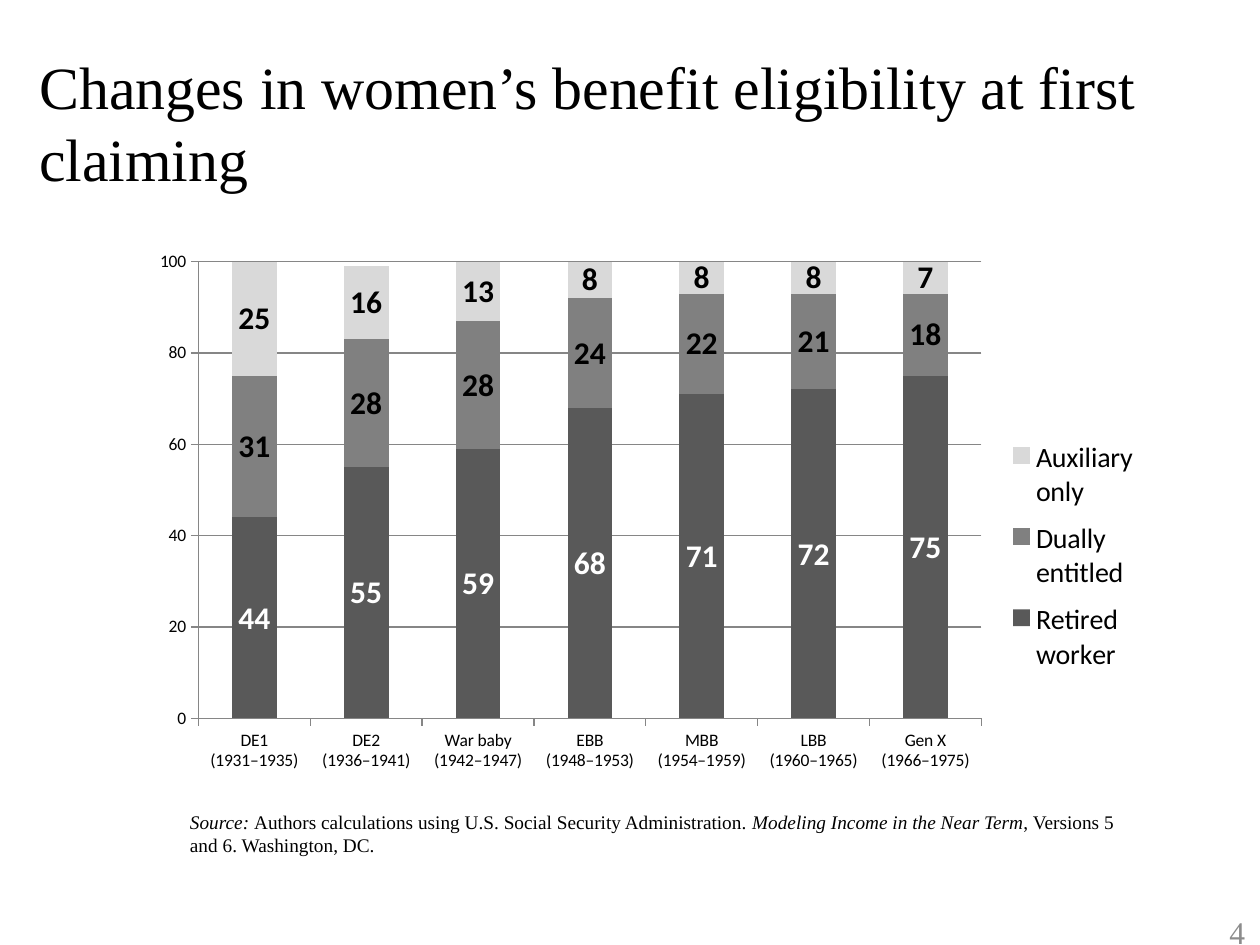
from lxml import etree
from pptx import Presentation
from pptx.chart.data import CategoryChartData
from pptx.dml.color import RGBColor
from pptx.enum.chart import XL_CHART_TYPE, XL_LABEL_POSITION, XL_LEGEND_POSITION, XL_TICK_MARK
from pptx.enum.text import MSO_ANCHOR, MSO_AUTO_SIZE, PP_ALIGN
from pptx.oxml.ns import qn
from pptx.util import Cm, Pt

COLORS = {
    "text": "000000",
    "muted": "8C8C8C",
    "light": "FFFFFF",
    "line": "868686",
    "retired": "595959",
    "dual": "808080",
    "auxiliary": "D9D9D9",
}
COHORTS = [
    "DE1\n(1931–1935)", "DE2\n(1936–1941)", "War baby\n(1942–1947)",
    "EBB\n(1948–1953)", "MBB\n(1954–1959)", "LBB\n(1960–1965)", "Gen X\n(1966–1975)",
]
# name, percentages, fill, label colour
ELIGIBILITY = [
    ("Retired worker", (44, 55, 59, 68, 71, 72, 75), "retired", "light"),
    ("Dually entitled", (31, 28, 28, 24, 22, 21, 18), "dual", "text"),
    ("Auxiliary only", (25, 16, 13, 8, 8, 8, 7), "auxiliary", "text"),
]


class SlideBuilder:
    serif = "Times New Roman"
    sans = "Calibri"

    def __init__(self, page):
        self.page = page

    def color(self, name):
        return RGBColor.from_string(COLORS[name])

    def style(self, font, size, color="text", face=None):
        font.name = face or self.serif
        font.size = Pt(size)
        font.color.rgb = self.color(color)

    def place(self, shape, left, top, width, height):
        shape.left, shape.top = Cm(left), Cm(top)
        shape.width, shape.height = Cm(width), Cm(height)

    def title(self, text, bounds):
        box = self.page.shapes.title
        self.place(box, *bounds)
        frame = box.text_frame
        frame.text = text
        frame.word_wrap = True
        frame.auto_size = MSO_AUTO_SIZE.NONE
        frame.vertical_anchor = MSO_ANCHOR.MIDDLE
        frame.margin_left = Cm(0.41)
        para = frame.paragraphs[0]
        para.alignment = PP_ALIGN.LEFT
        self.style(para.font, 34.2)

    def text(self, lines, bounds, size, color="text", align=PP_ALIGN.LEFT, anchor=MSO_ANCHOR.TOP):
        """Write lines of (text, italic) spans into one paragraph."""
        box = self.page.shapes.add_textbox(*map(Cm, bounds))
        frame = box.text_frame
        frame.word_wrap = True
        frame.vertical_anchor = anchor
        para = frame.paragraphs[0]
        para.alignment = align
        self.style(para.font, size, color)
        for number, line in enumerate(lines):
            if number:
                para.add_line_break()
            for text, italic in line:
                span = para.add_run()
                span.text = text
                span.font.italic = italic

    def layout(self, parent, position, x, y, w, h, inner=False):
        """Fix a chart part at fractions of the chart's size."""
        for old in parent.findall(qn("c:layout")):
            parent.remove(old)
        layout = etree.Element(qn("c:layout"))
        manual = etree.SubElement(layout, qn("c:manualLayout"))
        settings = [("layoutTarget", "inner")] if inner else []
        settings += [("xMode", "edge"), ("yMode", "edge"), ("x", x), ("y", y), ("w", w), ("h", h)]
        for tag, value in settings:
            etree.SubElement(manual, qn(f"c:{tag}")).set("val", str(value))
        parent.insert(position, layout)

    def axis(self, axis):
        axis.major_tick_mark = XL_TICK_MARK.OUTSIDE
        axis.minor_tick_mark = XL_TICK_MARK.NONE
        axis.format.line.color.rgb = self.color("line")
        axis.format.line.width = Pt(0.75)

    def stacked_chart(self, cohorts, rows, bounds):
        data = CategoryChartData(number_format="#,##0")
        data.categories = cohorts
        for name, values, *_ in rows:
            data.add_series(name, values)
        chart = self.page.shapes.add_chart(
            XL_CHART_TYPE.COLUMN_STACKED, *map(Cm, bounds), data).chart
        chart.has_title = False
        self.style(chart.font, 10, face=self.sans)

        # Axes and gridlines
        self.axis(chart.category_axis)
        scale = chart.value_axis
        self.axis(scale)
        scale.minimum_scale, scale.maximum_scale, scale.major_unit = 0, 100, 20
        scale.has_major_gridlines = True
        scale.major_gridlines.format.line.color.rgb = self.color("line")
        scale.major_gridlines.format.line.width = Pt(0.75)

        # Columns and their labels
        plot = chart.plots[0]
        plot.gap_width, plot.overlap = 150, 100
        plot.vary_by_categories = False
        for series, (_, _, fill, label) in zip(plot.series, rows):
            series.format.fill.solid()
            series.format.fill.fore_color.rgb = self.color(fill)
            labels = series.data_labels
            labels.show_value = True
            labels.number_format = "#,##0"
            labels.number_format_is_linked = False
            labels.position = XL_LABEL_POSITION.CENTER
            self.style(labels.font, 18, label, self.sans)
            labels.font.bold = True

        # Legend and plot area
        chart.has_legend = True
        legend = chart.legend
        legend.position = XL_LEGEND_POSITION.RIGHT
        legend.include_in_layout = False
        self.style(legend.font, 16, face=self.sans)
        self.layout(legend._element, 1, 0.85, 0.36, 0.14, 0.46)
        plot_area = chart._chartSpace.find(".//" + qn("c:plotArea"))
        self.layout(plot_area, 0, 0.06, 0.06, 0.77, 0.82, inner=True)


def main():
    deck = Presentation()
    deck.slide_width, deck.slide_height = Cm(25.4), Cm(19.05)
    page = deck.slides.add_slide(deck.slide_layouts[5])
    slide = SlideBuilder(page)

    slide.title("Changes in women’s benefit eligibility at first claiming", (0.38, 1.3, 25.02, 2.29))

    # Page number
    slide.text([[("4", False)]], (20.07, 18.16, 5.28, 1.27), 18, "muted",
               PP_ALIGN.RIGHT, MSO_ANCHOR.MIDDLE)

    # Source note
    slide.text([
        [("Source: ", True),
         ("Authors calculations using U.S. Social Security Administration. ", False),
         ("Modeling Income in the Near Term", True),
         (", Versions 5", False)],
        [("and 6. Washington, DC.", False)],
    ], (3.58, 16.2, 21.82, 1.68), 11)

    slide.stacked_chart(COHORTS, ELIGIBILITY, (2.77, 4.6, 20.5, 11.23))
    deck.save("out.pptx")


if __name__ == "__main__":
    main()
